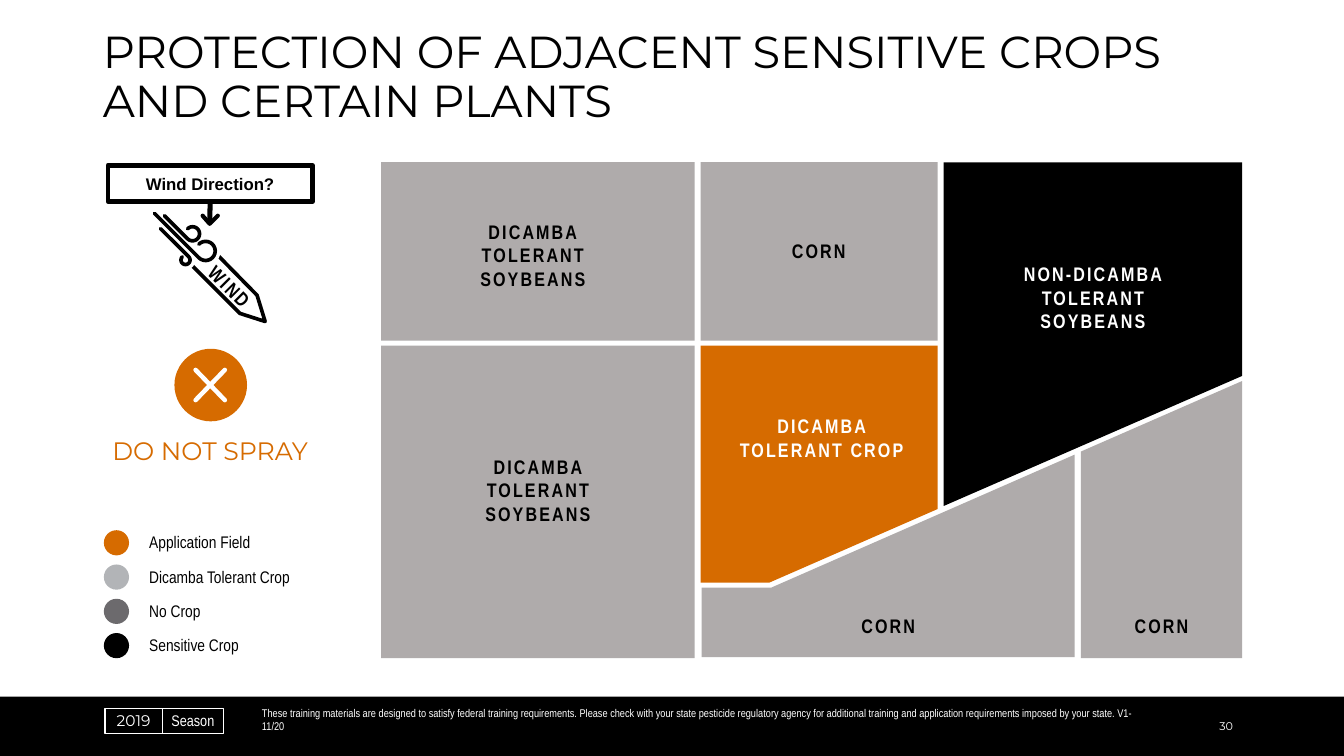
import math

import pptx
import pptx.util
import pptx.dml.color
import pptx.enum.shapes
import pptx.enum.text
import pptx.oxml.ns
from lxml import etree

Inches, Pt = pptx.util.Inches, pptx.util.Pt
SHAPE = pptx.enum.shapes.MSO_SHAPE
ALIGN = pptx.enum.text.PP_ALIGN
ANCHOR = pptx.enum.text.MSO_ANCHOR

COLORS = {"black": "000000", "white": "FFFFFF", "orange": "D66B00",
          "field": "AFABAB", "tolerant": "B2B4B7", "bare": "6C6A6D"}
TITLE = "PROTECTION OF ADJACENT SENSITIVE CROPS AND CERTAIN PLANTS"
DISCLAIMER = ("These training materials are designed to satisfy federal training "
              "requirements. Please check with your state pesticide regulatory agency "
              "for additional training and application requirements imposed by your "
              "state. V1-11/20")

# left, top, width, height
RECT_FIELDS = [(3.78, 1.61, 3.11, 1.77), (6.95, 1.61, 2.35, 1.77), (3.78, 3.43, 3.11, 3.1)]
# colour, corners
CUT_FIELDS = [
    ("black", [(9.36, 5.02), (12.32, 3.73), (12.32, 1.61), (9.36, 1.61)]),
    ("field", [(10.66, 4.51), (7.65, 5.83), (6.96, 5.83), (6.96, 6.52), (10.66, 6.52)]),
    ("field", [(10.72, 4.48), (10.72, 6.53), (12.32, 6.53), (12.32, 3.78)]),
    ("orange", [(6.95, 3.43), (6.95, 5.78), (7.63, 5.78), (9.3, 5.05), (9.3, 3.43)]),
]
SOYBEANS = ["DICAMBA", "TOLERANT", "SOYBEANS"]
# lines, box, colour, rotation
FIELD_LABELS = [
    (SOYBEANS, (4.73, 2.18, 1.11, 0.71), "black", 0),
    (SOYBEANS, (4.78, 4.51, 1.11, 0.71), "black", 0),
    (["CORN"], (7.84, 2.37, 0.56, 0.24), "black", 0),
    (["CORN"], (8.53, 6.09, 0.56, 0.24), "black", 0),
    (["CORN"], (11.24, 6.09, 0.56, 0.24), "black", 0),
    (["NON-DICAMBA"] + SOYBEANS[1:], (10.14, 2.6, 1.4, 0.71), "white", 0),
    (["DICAMBA", "TOLERANT CROP"], (7.3, 4.11, 1.7, 0.47), "white", 0),
    (["WIND"], (2.02, 2.72, 0.51, 0.24), "black", 45),
]
LEGEND = [("Application Field", "orange"), ("Dicamba Tolerant Crop", "tolerant"),
          ("No Crop", "bare"), ("Sensitive Crop", "black")]
LEGEND_TOP, LEGEND_STEP, DOT = 5.26, 0.34, 0.25
# curl centre x, y, curl radius, tail run, turn direction
GUSTS = [(1.84, 2.58, 0.045, 0.28, 1), (2.04, 2.49, 0.095, 0.44, -1),
         (1.91, 2.32, 0.07, 0.23, -1)]
WIND_ARROW = [(1.89, 2.62), (2.38, 3.11), (2.63, 3.19), (2.55, 2.93), (2.06, 2.43)]

prs = pptx.Presentation()
prs.slide_width, prs.slide_height = Inches(13.33), Inches(7.5)
s = prs.slides.add_slide(prs.slide_layouts[5])


def rgb(name):
    return pptx.dml.color.RGBColor.from_string(COLORS[name])


def paint(sp, fill=None, line=None, width=1):
    sp.shadow.inherit = False
    if fill:
        sp.fill.solid()
        sp.fill.fore_color.rgb = rgb(fill)
    else:
        sp.fill.background()
    if line:
        sp.line.color.rgb = rgb(line)
        sp.line.width = Pt(width)
    else:
        sp.line.fill.background()
    return sp


def add_preset(kind, box, **look):
    return paint(s.shapes.add_shape(kind, *map(Inches, box)), **look)


def add_outline(points, close=True, **look):
    pts = [(Inches(x), Inches(y)) for x, y in points]
    builder = s.shapes.build_freeform(*pts[0], scale=1.0)
    builder.add_line_segments(pts[1:], close=close)
    sp = paint(builder.convert_to_shape(), **look)
    if not close:
        sp.line._get_or_add_ln().set("cap", "rnd")
    return sp


def add_line(x1, y1, x2, y2, color, width, cap="flat"):
    line = s.shapes.add_connector(pptx.enum.shapes.MSO_CONNECTOR.STRAIGHT,
                                  *map(Inches, (x1, y1, x2, y2)))
    line.line.color.rgb = rgb(color)
    line.line.width = Pt(width)
    line.line._get_or_add_ln().set("cap", cap)
    etree.SubElement(line._element.spPr, pptx.oxml.ns.qn("a:effectLst"))
    return line


def write(sp, lines, font, size, color="black", bold=False, align=ALIGN.LEFT,
          anchor=ANCHOR.TOP, wrap=False, insets=(0, 0, 0, 0), spc=0, spacing=None):
    tf = sp.text_frame
    frame = {"word_wrap": wrap, "vertical_anchor": anchor,
             "auto_size": pptx.enum.text.MSO_AUTO_SIZE.NONE}
    for side, inset in zip(("left", "top", "right", "bottom"), insets):
        frame["margin_" + side] = Inches(inset)
    for name, value in frame.items():
        setattr(tf, name, value)
    for i, text in enumerate(lines):
        p = tf.paragraphs[0] if i == 0 else tf.add_paragraph()
        p.alignment = align
        if spacing:
            p.line_spacing = spacing
        r = p.add_run()
        r.text = text
        for name, value in {"name": font, "size": Pt(size), "bold": bold}.items():
            setattr(r.font, name, value)
        r.font.color.rgb = rgb(color)
        if spc:
            r._r.get_or_add_rPr().set("spc", str(spc))


def add_text(box, lines, font, size, **look):
    sp = s.shapes.add_textbox(*map(Inches, box))
    write(sp, lines, font, size, **look)
    return sp


def gust_points(cx, cy, radius, run, turn):
    """Diagonal tail followed by three quarters of a circle."""
    start = -45 if turn > 0 else 135
    angles = [math.radians(start + turn * step) for step in range(0, 271, 15)]
    curl = [(cx + radius * math.cos(a), cy + radius * math.sin(a)) for a in angles]
    x, y = curl[0]
    return [(x - run, y - run)] + curl


# Title
title = s.shapes.title
title.left, title.top, title.width, title.height = map(Inches, (0.92, 0.25, 11.5, 1.19))
write(title, [TITLE], "Montserrat", 32, wrap=True, insets=(0.1, 0.05, 0.1, 0.05), spacing=0.9)

# Footer
add_preset(SHAPE.RECTANGLE, (0, 6.91, 13.33, 0.59), fill="black")
add_preset(SHAPE.RECTANGLE, (1.04, 7.03, 1.18, 0.25), line="white")
add_line(1.61, 7.03, 1.61, 7.28, "white", 1)
season = {"color": "white", "anchor": ANCHOR.BOTTOM, "spacing": 0.9}
add_text((1.06, 7.07, 0.53, 0.17), ["2019"], "Montserrat", 11, align=ALIGN.CENTER, **season)
add_text((1.7, 7.07, 0.48, 0.17), ["Season"], "Arial Narrow", 11, **season)
note = {"color": "white", "anchor": ANCHOR.BOTTOM, "wrap": True, "insets": (0.1, 0.05, 0.1, 0)}
add_text((2.5, 6.9, 9.05, 0.37), [DISCLAIMER], "Arial Narrow", 8, **note)
add_text((11.83, 6.9, 0.5, 0.37), ["30"], "Montserrat", 8, align=ALIGN.RIGHT, **note)

# Field map
for box in RECT_FIELDS:
    add_preset(SHAPE.RECTANGLE, box, fill="field")
for color, corners in CUT_FIELDS:
    add_outline(corners, fill=color)

# Wind icon
add_outline(WIND_ARROW, fill="white", line="black", width=2.6)
for color, width, fill in (("white", 7.6, "white"), ("black", 2.6, None)):
    for gust in GUSTS:
        add_outline(gust_points(*gust), close=False, fill=fill, line=color, width=width)
for lines, box, color, rotation in FIELD_LABELS:
    label = add_text(box, lines, "Arial Narrow", 14, color=color, bold=True,
                     align=ALIGN.CENTER, spc=150)
    label.rotation = rotation

# Wind question
question = add_preset(SHAPE.RECTANGLE, (1.07, 1.64, 2.03, 0.36),
                      fill="white", line="black", width=3.3)
write(question, ["Wind Direction?"], "Arial", 12, bold=True,
      align=ALIGN.CENTER, anchor=ANCHOR.MIDDLE)
pointer = add_line(2.08, 2, 2.08, 2.2, "black", 3.6)
pointer.begin_connect(question, 2)
add_outline([(2.01, 2.14), (2.08, 2.22), (2.16, 2.14)], close=False, line="black", width=3)

# Spray verdict
add_preset(SHAPE.OVAL, (1.73, 3.46, 0.72, 0.72), fill="orange")
for y1, y2 in ((3.67, 3.97), (3.97, 3.67)):
    add_line(1.94, y1, 2.23, y2, "white", 3.2, cap="rnd")
add_text((0.75, 4.27, 2.67, 0.4), ["DO NOT SPRAY"], "Montserrat", 18, color="orange",
         align=ALIGN.CENTER, wrap=True, insets=(0.1, 0.05, 0.1, 0.05))

# Legend
for i, (name, color) in enumerate(LEGEND):
    y = LEGEND_TOP + i * LEGEND_STEP
    add_preset(SHAPE.OVAL, (1.03, y, DOT, DOT), fill=color)
    add_text((1.48, y + 0.02, 1.41, 0.2), [name], "Arial Narrow", 12)

prs.save("out.pptx")
